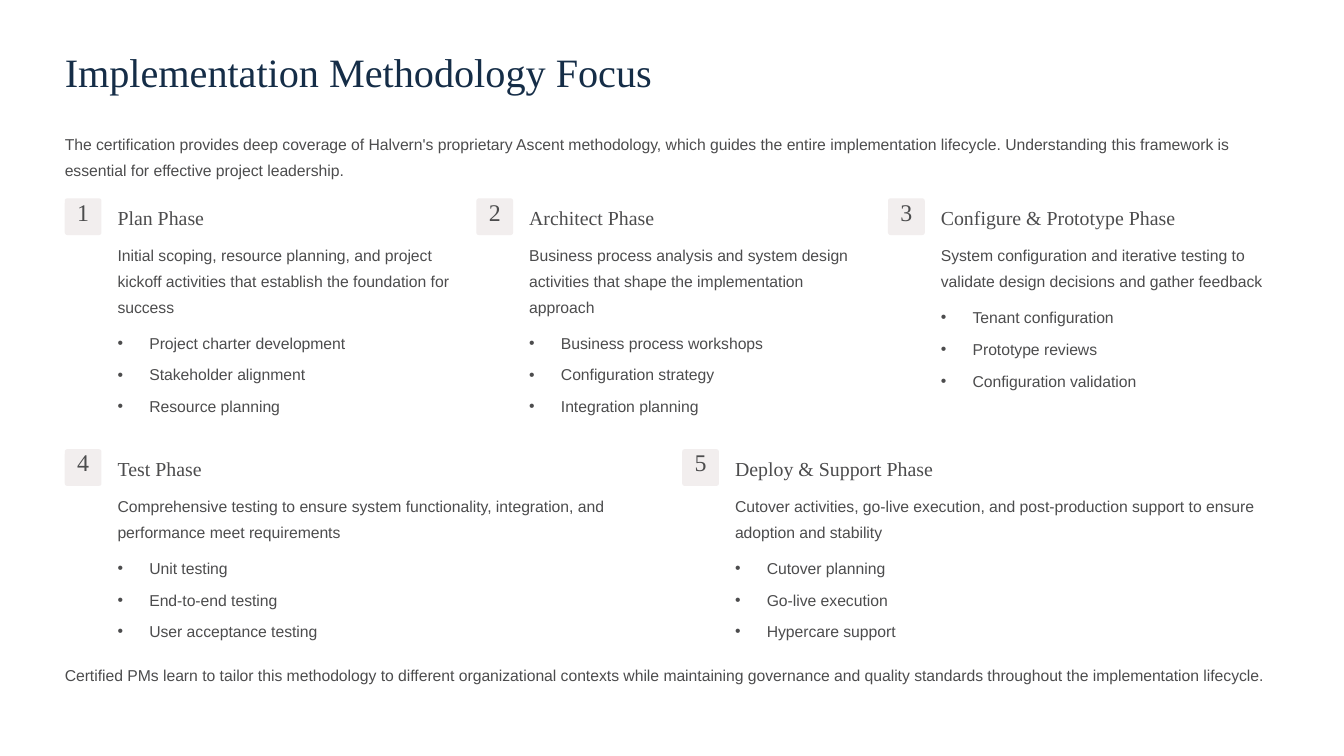
from dataclasses import dataclass

from lxml.etree import SubElement
from pptx import Presentation
from pptx.dml.color import RGBColor
from pptx.enum.shapes import MSO_SHAPE
from pptx.enum.text import MSO_ANCHOR, MSO_AUTO_SIZE, PP_ALIGN
from pptx.oxml.ns import qn
from pptx.util import Pt

TITLE = "Implementation Methodology Focus"
INTRO = (
    "The certification provides deep coverage of Halvern's proprietary Ascent methodology, "
    "which guides the entire implementation lifecycle. Understanding this framework is "
    "essential for effective project leadership."
)
CLOSING = (
    "Certified PMs learn to tailor this methodology to different organizational contexts while "
    "maintaining governance and quality standards throughout the implementation lifecycle."
)
# Each row: top, height of the body text, phases (name, description, activities)
ROWS = [
    (170, 152, [
        ("Plan Phase",
         "Initial scoping, resource planning, and project kickoff activities that establish "
         "the foundation for success",
         ["Project charter development", "Stakeholder alignment", "Resource planning"]),
        ("Architect Phase",
         "Business process analysis and system design activities that shape the "
         "implementation approach",
         ["Business process workshops", "Configuration strategy", "Integration planning"]),
        ("Configure & Prototype Phase",
         "System configuration and iterative testing to validate design decisions and "
         "gather feedback",
         ["Tenant configuration", "Prototype reviews", "Configuration validation"]),
    ]),
    (385, 130, [
        ("Test Phase",
         "Comprehensive testing to ensure system functionality, integration, and performance "
         "meet requirements",
         ["Unit testing", "End-to-end testing", "User acceptance testing"]),
        ("Deploy & Support Phase",
         "Cutover activities, go-live execution, and post-production support to ensure "
         "adoption and stability",
         ["Cutover planning", "Go-live execution", "Hypercare support"]),
    ]),
]


@dataclass(frozen=True)
class TextStyle:
    font: str
    size: float
    line: float
    color: str = "4C4C4D"


@dataclass(frozen=True)
class Theme:
    title: TextStyle = TextStyle("Times New Roman", 34.5, 43.5, "152D47")
    heading: TextStyle = TextStyle("Times New Roman", 17, 21.5)
    number: TextStyle = TextStyle("Times New Roman", 20.5, 20.5)
    body: TextStyle = TextStyle("Arial", 13.5, 22)
    tile: str = "F2EEEE"


THEME = Theme()
SLIDE_WIDTH, SLIDE_HEIGHT = 1152, 648
MARGIN, CONTENT_WIDTH = 55.5, 1040.5
COLUMN_GAP = 18
TILE_SIZE, TILE_INSET, TILE_RADIUS = 31.5, 2.5, 0.07
TEXT_OFFSET, HEADING_DROP, BODY_DROP = 45.25, 5, 35.25
LIST_GAP, ITEM_GAP, BULLET_INDENT = 8.75, 5.25, 27.25


def apply(target, values):
    for name, value in values.items():
        setattr(target, name, value)


def place(shape, left, top, width, height):
    apply(shape, {"left": Pt(left), "top": Pt(top), "width": Pt(width), "height": Pt(height)})


def reset_frame(frame, top_inset=0):
    apply(frame, {
        "auto_size": MSO_AUTO_SIZE.NONE, "word_wrap": True, "vertical_anchor": MSO_ANCHOR.TOP,
        "margin_left": 0, "margin_right": 0, "margin_top": Pt(top_inset), "margin_bottom": 0,
    })


def write(paragraph, text, style, align=PP_ALIGN.LEFT, before=0):
    paragraph.text = text
    apply(paragraph, {"alignment": align, "line_spacing": Pt(style.line),
                      "space_before": Pt(before), "space_after": Pt(0)})
    apply(paragraph.font, {"name": style.font, "size": Pt(style.size)})
    paragraph.font.color.rgb = RGBColor.from_string(style.color)


def set_bullet(paragraph, char=None):
    """Give the paragraph a hanging bullet, or clear the inherited one."""
    properties = paragraph._p.get_or_add_pPr()
    indent = Pt(BULLET_INDENT) if char else 0
    properties.set("marL", str(indent))
    properties.set("indent", str(-indent))
    bullet = SubElement(properties, qn("a:buChar" if char else "a:buNone"))
    if char:
        bullet.set("char", char)
    # The schema wants the bullet ahead of the default run properties.
    properties.find(qn("a:defRPr")).addprevious(bullet)


def add_text(slide, text, style, left, top, width, height):
    box = slide.shapes.add_textbox(Pt(left), Pt(top), Pt(width), Pt(height))
    reset_frame(box.text_frame)
    write(box.text_frame.paragraphs[0], text, style)


def add_tile(slide, number, left, top):
    tile = slide.shapes.add_shape(MSO_SHAPE.ROUNDED_RECTANGLE, Pt(left), Pt(top),
                                  Pt(TILE_SIZE), Pt(TILE_SIZE))
    tile.adjustments[0] = TILE_RADIUS
    tile.shadow.inherit = False
    tile.fill.solid()
    tile.fill.fore_color.rgb = RGBColor.from_string(THEME.tile)
    tile.line.fill.background()
    reset_frame(tile.text_frame, TILE_INSET)
    write(tile.text_frame.paragraphs[0], str(number), THEME.number, PP_ALIGN.CENTER)


def fill_body(body, description, activities):
    frame = body.text_frame
    reset_frame(frame)
    write(frame.paragraphs[0], description, THEME.body)
    set_bullet(frame.paragraphs[0])
    for index, activity in enumerate(activities):
        item = frame.add_paragraph()
        write(item, activity, THEME.body, before=ITEM_GAP if index else LIST_GAP)
        set_bullet(item, "•")


def main():
    deck = Presentation()
    apply(deck, {"slide_width": Pt(SLIDE_WIDTH), "slide_height": Pt(SLIDE_HEIGHT)})
    layout = deck.slide_layouts.get_by_name("Title and Content")
    slide = deck.slides.add_slide(layout)

    # One body placeholder per phase; the layout supplies the first.
    phase_count = sum(len(phases) for _, _, phases in ROWS)
    for _ in range(phase_count - 1):
        slide.shapes.clone_placeholder(layout.placeholders[1])
    title, *bodies = slide.placeholders

    place(title, MARGIN, 38, CONTENT_WIDTH, 44)
    reset_frame(title.text_frame)
    write(title.text_frame.paragraphs[0], TITLE, THEME.title)
    add_text(slide, INTRO, THEME.body, MARGIN, 110, CONTENT_WIDTH, 44)

    number = 0
    for top, body_height, phases in ROWS:
        stride = (CONTENT_WIDTH + COLUMN_GAP) / len(phases)
        text_width = stride - COLUMN_GAP - TEXT_OFFSET
        for column, (name, description, activities) in enumerate(phases):
            left = MARGIN + column * stride
            text_left = left + TEXT_OFFSET
            body = bodies[number]
            number += 1
            add_tile(slide, number, left, top)
            add_text(slide, name, THEME.heading, text_left, top + HEADING_DROP, text_width, 21.5)
            place(body, text_left, top + BODY_DROP, text_width, body_height)
            fill_body(body, description, activities)

    add_text(slide, CLOSING, THEME.body, MARGIN, 565, CONTENT_WIDTH, 44)
    deck.save("out.pptx")


if __name__ == "__main__":
    main()
